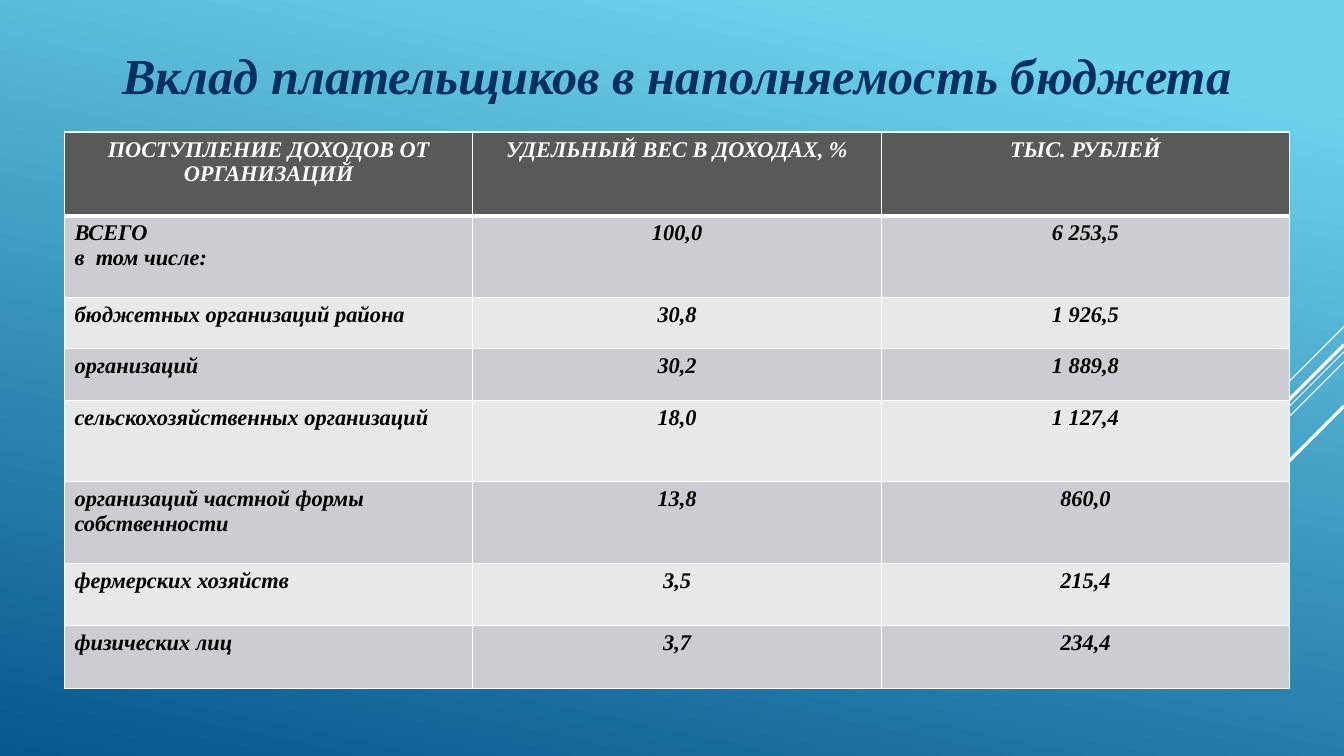
"""Build a slide with a table of payers' contributions to the budget."""
import dataclasses

import lxml.etree
import pptx
import pptx.dml.color
import pptx.enum.shapes
import pptx.enum.text
import pptx.oxml.ns
import pptx.util

Inches, Pt = pptx.util.Inches, pptx.util.Pt
RGBColor = pptx.dml.color.RGBColor
PP_ALIGN = pptx.enum.text.PP_ALIGN
qn = pptx.oxml.ns.qn

TITLE = "Вклад плательщиков в наполняемость бюджета"
ROWS = [
    ("ПОСТУПЛЕНИЕ ДОХОДОВ ОТ ОРГАНИЗАЦИЙ", "УДЕЛЬНЫЙ ВЕС В ДОХОДАХ, %", "ТЫС. РУБЛЕЙ"),
    ("ВСЕГО\nв  том числе:", "100,0", "6 253,5"),
    ("бюджетных организаций района", "30,8", "1 926,5"),
    ("организаций", "30,2", "1 889,8"),
    ("сельскохозяйственных организаций", "18,0", "1 127,4"),
    ("организаций частной формы собственности", "13,8", "860,0"),
    ("фермерских хозяйств", "3,5", "215,4"),
    ("физических лиц", "3,7", "234,4"),
]
ROW_HEIGHTS = [0.83, 0.81, 0.51, 0.51, 0.81, 0.81, 0.62, 0.62]
DIAGONALS = [(3.24, 1, 0.75), (3.49, 3.26, 0.75), (3.59, 2.07, 0.75),
             (3.42, 1.91, 2.25), (4.03, 1.39, 2.25)]
SLIDE_WIDTH, SLIDE_HEIGHT = 13.33, 7.5
LEFT, CONTENT_WIDTH = 0.64, 12.15
TITLE_TOP, TITLE_HEIGHT, TABLE_TOP = 0.16, 1.16, 1.31


@dataclasses.dataclass(frozen=True)
class Theme:
    font: str = "Times New Roman"
    title_size: int = 36
    table_size: int = 16
    title: str = "052F61"
    light: str = "FFFFFF"
    text: str = "000000"
    header: str = "595959"
    bands: tuple = ("CCCDD2", "E7E8EA")
    gradient: tuple = ((0.1, "6ED2EB"), (1, "06588E"))
    gradient_angle: int = 258
    border: int = 1
    header_border: int = 3


THEME = Theme()


def style_text(text_frame, size, color, alignment):
    for paragraph in text_frame.paragraphs:
        paragraph.alignment = alignment
        font = paragraph.font
        font.name, font.size = THEME.font, Pt(size)
        font.bold = font.italic = True
        font.color.rgb = RGBColor.from_string(color)


def paint_background(slide):
    fill = slide.background.fill
    fill.gradient()
    fill.gradient_angle = THEME.gradient_angle
    for stop, (position, color) in zip(fill.gradient_stops, THEME.gradient):
        stop.position = position
        stop.color.rgb = RGBColor.from_string(color)


def add_diagonals(slide):
    for top, reach, weight in DIAGONALS:
        line = slide.shapes.add_connector(
            pptx.enum.shapes.MSO_CONNECTOR.STRAIGHT, Inches(SLIDE_WIDTH), Inches(top),
            Inches(SLIDE_WIDTH - reach), Inches(top + reach))
        line.line.color.rgb = RGBColor.from_string(THEME.light)
        line.line.width = Pt(weight)
        lxml.etree.SubElement(line._element.spPr, qn("a:effectLst"))


def add_title(slide):
    title = slide.shapes.title
    title.left, title.top = Inches(LEFT), Inches(TITLE_TOP)
    title.width, title.height = Inches(CONTENT_WIDTH), Inches(TITLE_HEIGHT)
    frame = title.text_frame
    frame.text = TITLE
    frame.auto_size = pptx.enum.text.MSO_AUTO_SIZE.NONE
    frame.vertical_anchor = pptx.enum.text.MSO_ANCHOR.MIDDLE
    style_text(frame, THEME.title_size, THEME.title, PP_ALIGN.CENTER)


def set_borders(cell, row_index):
    properties = cell._tc.get_or_add_tcPr()
    heavy_side = {0: "B", 1: "T"}.get(row_index)
    for position, side in enumerate("LRTB"):
        width = THEME.header_border if side == heavy_side else THEME.border
        border = lxml.etree.Element(qn(f"a:ln{side}"), w=str(Pt(width)))
        fill = lxml.etree.SubElement(border, qn("a:solidFill"))
        lxml.etree.SubElement(fill, qn("a:srgbClr"), val=THEME.light)
        properties.insert(position, border)


def add_budget_table(slide):
    table = slide.shapes.add_table(
        len(ROWS), len(ROWS[0]), Inches(LEFT), Inches(TABLE_TOP),
        Inches(CONTENT_WIDTH), Inches(sum(ROW_HEIGHTS))).table
    for row_index, (values, height) in enumerate(zip(ROWS, ROW_HEIGHTS)):
        table.rows[row_index].height = Inches(height)
        is_header = row_index == 0
        background = THEME.header if is_header else THEME.bands[(row_index - 1) % 2]
        color = THEME.light if is_header else THEME.text
        for column_index, value in enumerate(values):
            cell = table.cell(row_index, column_index)
            cell.text = value
            cell.fill.solid()
            cell.fill.fore_color.rgb = RGBColor.from_string(background)
            centered = is_header or column_index > 0
            style_text(cell.text_frame, THEME.table_size, color,
                       PP_ALIGN.CENTER if centered else PP_ALIGN.LEFT)
            set_borders(cell, row_index)


def main():
    presentation = pptx.Presentation()
    presentation.slide_width = Inches(SLIDE_WIDTH)
    presentation.slide_height = Inches(SLIDE_HEIGHT)
    slide = presentation.slides.add_slide(presentation.slide_layouts[5])
    paint_background(slide)
    add_diagonals(slide)
    add_title(slide)
    add_budget_table(slide)
    presentation.save("out.pptx")


if __name__ == "__main__":
    main()
